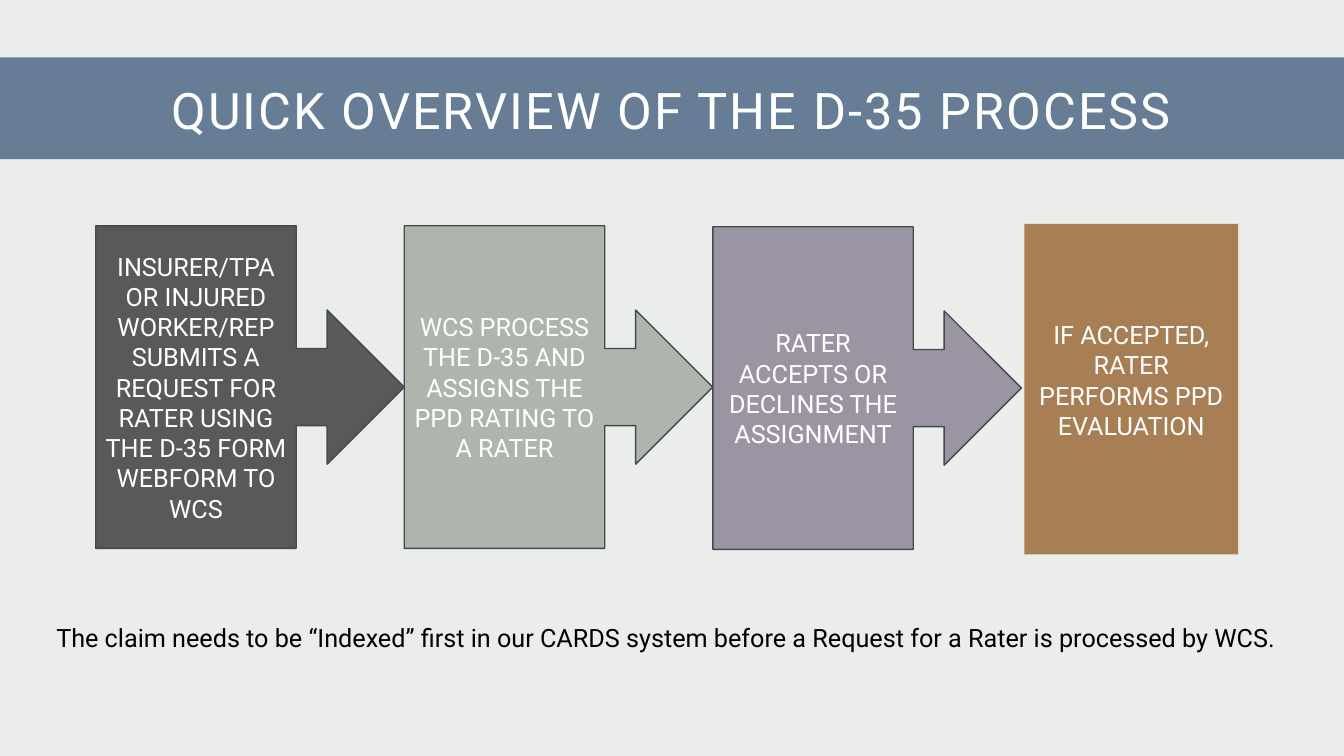
from dataclasses import dataclass

from pptx import Presentation
from pptx.dml.color import RGBColor
from pptx.enum.shapes import MSO_SHAPE
from pptx.enum.text import MSO_ANCHOR, MSO_AUTO_SIZE, PP_ALIGN
from pptx.oxml.ns import qn
from pptx.util import Inches, Pt


@dataclass(frozen=True)
class Theme:
    font: str = "Roboto"
    background: str = "EBEDEB"
    banner: str = "667D95"
    outline: str = "424951"
    light_text: str = "FFFFFF"
    dark_text: str = "000000"
    title_size: int = 36
    body_size: int = 18
    title_spacing: int = 150  # hundredths of a point


THEME = Theme()

# Wording, fill and top edge of each callout, in reading order
CALLOUTS = [
    ("INSURER/TPA OR INJURED WORKER/REP SUBMITS A REQUEST FOR RATER "
     "USING THE D-35 FORM WEBFORM TO WCS", "595959", 2.24),
    ("WCS PROCESS THE D-35 AND ASSIGNS THE PPD RATING TO A RATER", "ADB5AD", 2.24),
    ("RATER ACCEPTS OR DECLINES THE ASSIGNMENT", "9B95A3", 2.25),
]
CALLOUT_LEFT, CALLOUT_WIDTH, CALLOUT_HEIGHT = 0.95, 3.06, 3.2


def rgb(color):
    return RGBColor.from_string(color)


def place(shape, box):
    for side, length in zip(("left", "top", "width", "height"), box):
        setattr(shape, side, Inches(length))


def write(shape, text, size, color, align, **frame_format):
    """Put one formatted paragraph in a shape."""
    frame = shape.text_frame
    frame_format = {"word_wrap": True, "auto_size": MSO_AUTO_SIZE.NONE, **frame_format}
    for name, value in frame_format.items():
        setattr(frame, name, value)
    paragraph = frame.paragraphs[0]
    paragraph.alignment = align
    run = paragraph.add_run()
    run.text = text
    for name, value in {"name": THEME.font, "size": Pt(size)}.items():
        setattr(run.font, name, value)
    run.font.color.rgb = rgb(color)


def add_banner(slide, box):
    title = slide.shapes.title
    place(title, box)
    title.fill.solid()
    title.fill.fore_color.rgb = rgb(THEME.banner)
    write(title, "QUICK OVERVIEW OF THE D-35 PROCESS", THEME.title_size,
          THEME.light_text, PP_ALIGN.CENTER, vertical_anchor=MSO_ANCHOR.MIDDLE,
          margin_left=Inches(0.12), margin_top=Inches(0.12),
          margin_right=Inches(0.12), margin_bottom=Inches(0.1))
    for properties in title.element.iter(qn("a:rPr")):
        properties.set("spc", str(THEME.title_spacing))


def add_step(slide, box, kind, text, fill, outline=None, **frame_format):
    step = slide.shapes.add_shape(kind, *map(Inches, box))
    step.shadow.inherit = False
    step.fill.solid()
    step.fill.fore_color.rgb = rgb(fill)
    if outline:
        step.line.color.rgb = rgb(outline)
        step.line.width = Pt(1)
    else:
        step.line.fill.background()
    write(step, text, THEME.body_size, THEME.light_text, PP_ALIGN.CENTER, **frame_format)


def add_process(slide):
    for index, (text, fill, top) in enumerate(CALLOUTS):
        left = CALLOUT_LEFT + index * CALLOUT_WIDTH
        add_step(slide, (left, top, CALLOUT_WIDTH, CALLOUT_HEIGHT),
                 MSO_SHAPE.RIGHT_ARROW_CALLOUT, text, fill, THEME.outline,
                 vertical_anchor=MSO_ANCHOR.MIDDLE)
    add_step(slide, (10.16, 2.22, 2.12, 3.28), MSO_SHAPE.RECTANGLE,
             "IF ACCEPTED, RATER PERFORMS PPD EVALUATION", "A87F55",
             vertical_anchor=MSO_ANCHOR.TOP, margin_top=Inches(0.95))


def add_note(slide, box):
    note = slide.shapes.add_textbox(*map(Inches, box))
    write(note, "The claim needs to be “Indexed” first in our CARDS system before "
          "a Request for a Rater is processed by WCS.", THEME.body_size,
          THEME.dark_text, PP_ALIGN.LEFT, auto_size=MSO_AUTO_SIZE.SHAPE_TO_FIT_TEXT)


def main():
    presentation = Presentation()
    presentation.slide_width = Inches(13.33)
    presentation.slide_height = Inches(7.5)
    slide = presentation.slides.add_slide(
        presentation.slide_layouts.get_by_name("Title Only"))
    slide.background.fill.solid()
    slide.background.fill.fore_color.rgb = rgb(THEME.background)
    add_banner(slide, (0, 0.57, 13.33, 1.01))
    add_process(slide)
    add_note(slide, (0.46, 6.12, 12.41, 0.4))
    presentation.save("out.pptx")


if __name__ == "__main__":
    main()
